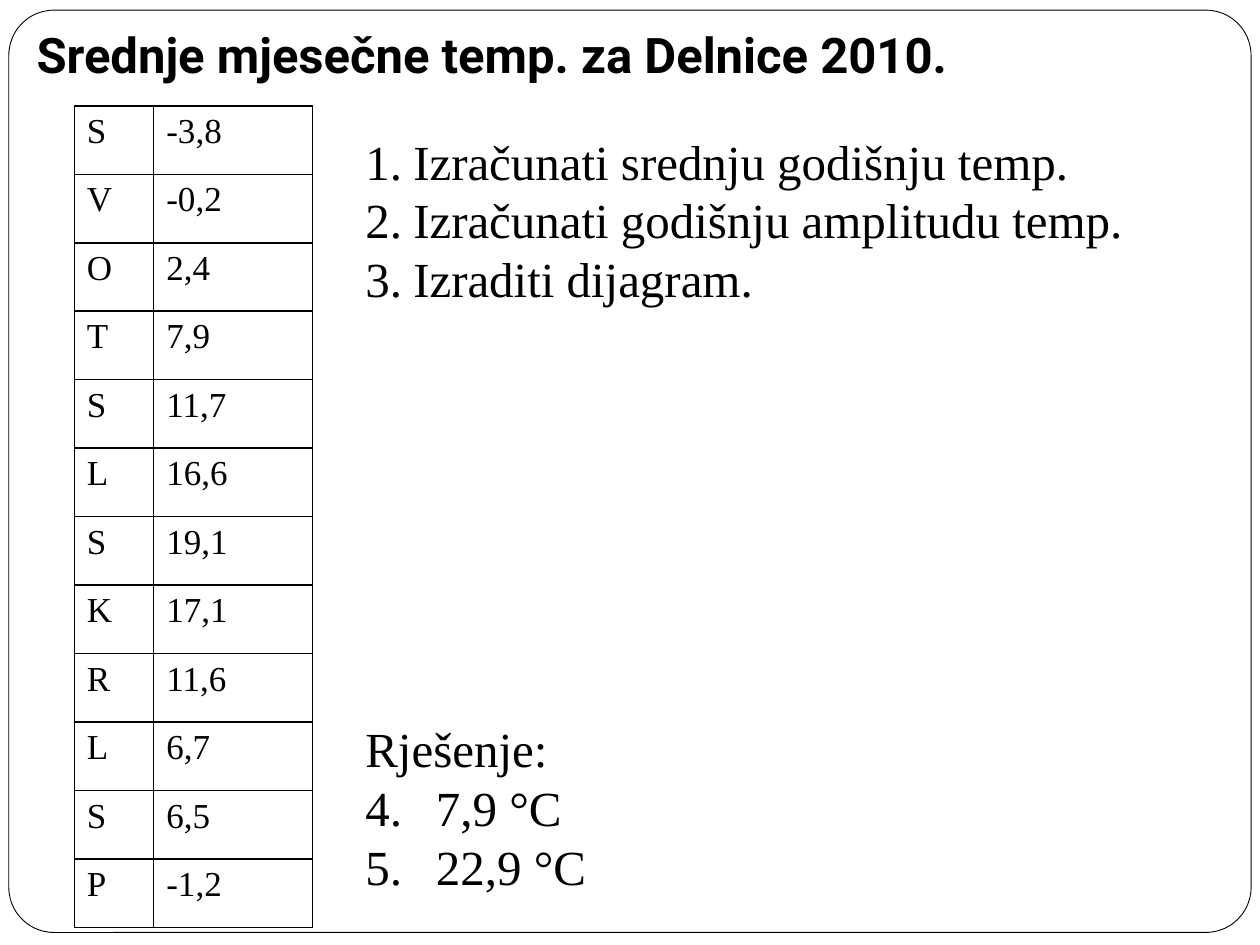
from dataclasses import dataclass
from typing import Optional

from lxml.etree import SubElement
from pptx import Presentation
from pptx.dml.color import RGBColor
from pptx.enum.shapes import MSO_SHAPE
from pptx.enum.text import MSO_ANCHOR, MSO_AUTO_SIZE, PP_ALIGN
from pptx.oxml.ns import qn
from pptx.util import Inches, Pt

BLACK = RGBColor(0, 0, 0)
WHITE = RGBColor(255, 255, 255)
SLIDE_W, SLIDE_H = Inches(10), Inches(7.5)
LINE_PITCH = 33.6
SOLUTION_GAP_LINES = 7

TITLE_FONT = {"name": "Roboto", "size": Pt(28), "bold": True}
TABLE_FONT = {"name": "Times New Roman", "size": Pt(20)}
TASK_FONT = {"name": "Times New Roman", "size": Pt(28)}


@dataclass
class Area:
    """A rectangle in percent of the slide's width and height."""
    left: float
    top: float
    width: float
    height: float

    def lengths(self) -> tuple:
        return (int(SLIDE_W * self.left / 100), int(SLIDE_H * self.top / 100),
                int(SLIDE_W * self.width / 100), int(SLIDE_H * self.height / 100))


@dataclass
class Line:
    text: str
    number_from: Optional[int] = None
    hanging: float = 0
    gap_lines: int = 0


FRAME = Area(0.7, 1.07, 98.6, 97.6)
TITLE = Area(1.9, 1.73, 91.5, 8.4)
TABLE = Area(5.9, 11.2, 18.9, 86.93)
TASKS = Area(28, 13.2, 65.4, 83.07)

MONTHS = "SVOTSLSKRLSP"
TEMPERATURES = ("-3,8", "-0,2", "2,4", "7,9", "11,7", "16,6",
                "19,1", "17,1", "11,6", "6,7", "6,5", "-1,2")

TASK_LINES = (
    Line("Izračunati srednju godišnju temp.", 1, 0.38),
    Line("Izračunati godišnju amplitudu temp.", 1, 0.38),
    Line("Izraditi dijagram.", 1, 0.38),
    Line("Rješenje:", gap_lines=SOLUTION_GAP_LINES),
    Line("7,9 °C", 4, 0.56),
    Line("22,9 °C", 4, 0.56),
)


def set_all(target, values: dict) -> None:
    for attribute, value in values.items():
        setattr(target, attribute, value)


def write(paragraph, text: str, font: dict) -> None:
    run = paragraph.add_run()
    run.text = text
    set_all(run.font, font)
    run.font.color.rgb = BLACK


def place(shape, area: Area) -> None:
    set_all(shape, dict(zip(("left", "top", "width", "height"), area.lengths())))


def draw_frame(slide) -> None:
    frame = slide.shapes.add_shape(MSO_SHAPE.ROUNDED_RECTANGLE, *FRAME.lengths())
    frame.adjustments[0] = 0.049
    frame.shadow.inherit = False
    frame.fill.solid()
    frame.fill.fore_color.rgb = WHITE
    frame.line.color.rgb = BLACK
    frame.line.width = Pt(0.5)
    # Send behind the placeholders
    slide.shapes._spTree.insert(2, frame._element)


def border_cell(cell) -> None:
    properties = cell._tc.get_or_add_tcPr()
    for side in ("a:lnL", "a:lnR", "a:lnT", "a:lnB"):
        border = SubElement(properties, qn(side), w=str(Pt(1)))
        fill = SubElement(border, qn("a:solidFill"))
        SubElement(fill, qn("a:srgbClr"), val=str(BLACK))


def draw_temperatures(slide) -> None:
    table = slide.shapes.add_table(len(MONTHS), 2, *TABLE.lengths()).table
    set_all(table, {"first_row": False, "horz_banding": False})
    width = TABLE.lengths()[2]
    table.columns[0].width = width // 3
    table.columns[1].width = width - width // 3
    for row, values in enumerate(zip(MONTHS, TEMPERATURES)):
        for column, value in enumerate(values):
            cell = table.cell(row, column)
            write(cell.text_frame.paragraphs[0], value, TABLE_FONT)
            border_cell(cell)
            cell.fill.background()


def write_line(paragraph, line: Line) -> None:
    set_all(paragraph, {"alignment": PP_ALIGN.LEFT, "line_spacing": Pt(LINE_PITCH),
                        "space_before": Pt(LINE_PITCH * line.gap_lines),
                        "space_after": Pt(0)})
    properties = paragraph._p.get_or_add_pPr()
    properties.set("marL", str(Inches(line.hanging)))
    properties.set("indent", str(-Inches(line.hanging)))
    if line.number_from is None:
        SubElement(properties, qn("a:buNone"))
    else:
        SubElement(properties, qn("a:buFont"), typeface=TASK_FONT["name"])
        SubElement(properties, qn("a:buAutoNum"), type="arabicPeriod",
                   startAt=str(line.number_from))
    write(paragraph, line.text, TASK_FONT)


def main() -> None:
    deck = Presentation()
    set_all(deck, {"slide_width": SLIDE_W, "slide_height": SLIDE_H})
    slide = deck.slides.add_slide(deck.slide_layouts[1])
    draw_frame(slide)

    # Title
    title = slide.shapes.title
    place(title, TITLE)
    set_all(title.text_frame, {"vertical_anchor": MSO_ANCHOR.BOTTOM, "word_wrap": True,
                               "auto_size": MSO_AUTO_SIZE.NONE,
                               "margin_bottom": Inches(0.1)})
    heading = title.text_frame.paragraphs[0]
    heading.alignment = PP_ALIGN.LEFT
    write(heading, "Srednje mjesečne temp. za Delnice 2010.", TITLE_FONT)

    # Monthly temperatures
    draw_temperatures(slide)

    # Tasks and solutions
    tasks = slide.placeholders[1]
    place(tasks, TASKS)
    frame = tasks.text_frame
    set_all(frame, {"vertical_anchor": MSO_ANCHOR.TOP, "word_wrap": True,
                    "auto_size": MSO_AUTO_SIZE.NONE})
    for index, line in enumerate(TASK_LINES):
        write_line(frame.add_paragraph() if index else frame.paragraphs[0], line)

    deck.save("out.pptx")


if __name__ == "__main__":
    main()
